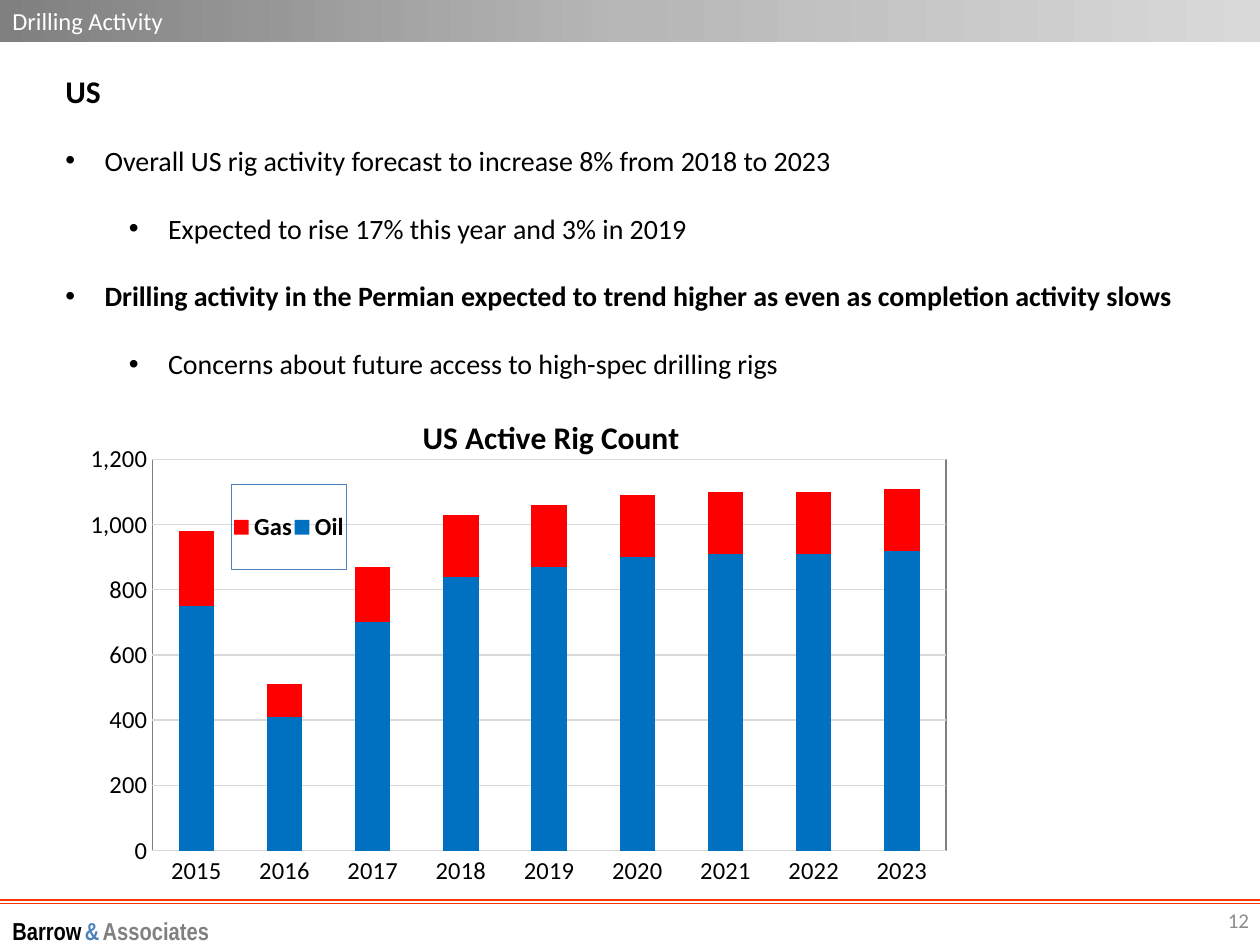
from dataclasses import dataclass

from lxml.etree import SubElement
from pptx import Presentation
from pptx.chart.data import CategoryChartData
from pptx.dml.color import RGBColor
from pptx.enum.chart import XL_CHART_TYPE, XL_LEGEND_POSITION, XL_TICK_MARK
from pptx.enum.shapes import MSO_CONNECTOR, MSO_SHAPE
from pptx.enum.text import MSO_ANCHOR, MSO_AUTO_SIZE, PP_ALIGN
from pptx.oxml.ns import qn
from pptx.util import Cm, Pt


@dataclass(frozen=True)
class Theme:
    font: str = "Calibri"
    footer_font: str = "Arial Narrow"
    black: str = "000000"
    white: str = "FFFFFF"
    muted: str = "8C8C8C"
    gray: str = "808080"
    accent: str = "4F81BD"
    rule: str = "FF3300"
    grid: str = "D9D9D9"
    oil: str = "0070C0"
    gas: str = "FF0000"
    band: tuple = ((0, "808080"), (50, "B7B7B7"), (100, "D9D9D9"))
    heading_size: int = 18
    body_size: int = 16
    label_size: int = 14
    number_size: int = 12
    gap_size: int = 8
    paragraph_gap: float = 19.5
    line_width: float = 0.75


THEME = Theme()
SLIDE_WIDTH, SLIDE_HEIGHT = Cm(25.4), Cm(19.05)
BULLET_HANG = Cm(0.79)

# text, left indent, bold
BULLETS = (
    ("Overall US rig activity forecast to increase 8% from 2018 to 2023", Cm(0.79), False),
    ("Expected to rise 17% this year and 3% in 2019", Cm(2.07), False),
    ("Drilling activity in the Permian expected to trend higher as even as "
     "completion activity slows", Cm(0.79), True),
    ("Concerns about future access to high-spec drilling rigs", Cm(2.07), False),
)
YEARS = [str(year) for year in range(2015, 2024)]
RIG_COUNTS = (
    ("Oil", (750, 410, 700, 840, 870, 900, 910, 910, 920), THEME.oil),
    ("Gas", (230, 100, 170, 190, 190, 190, 190, 190, 190), THEME.gas),
)


def style_font(font, size, color=THEME.black, bold=False, name=THEME.font):
    font.name = name
    font.size = Pt(size)
    font.bold = bold
    font.color.rgb = RGBColor.from_string(color)


def style_line(line, color):
    line.color.rgb = RGBColor.from_string(color)
    line.width = Pt(THEME.line_width)


def add_text_frame(slide, left, top, width, height, anchor=MSO_ANCHOR.MIDDLE):
    frame = slide.shapes.add_textbox(left, top, width, height).text_frame
    frame.word_wrap = True
    frame.vertical_anchor = anchor
    return frame


def add_header_band(slide, text):
    band = slide.shapes.add_shape(MSO_SHAPE.RECTANGLE, 0, 0, SLIDE_WIDTH, Cm(0.84))
    band.shadow.inherit = False
    band.line.fill.background()
    band.fill.gradient()
    band.fill.gradient_angle = 0
    stops = band._element.spPr.find(qn("a:gradFill")).find(qn("a:gsLst"))
    stops.clear()
    for percent, color in THEME.band:
        stop = SubElement(stops, qn("a:gs"), pos=str(percent * 1000))
        SubElement(stop, qn("a:srgbClr"), val=color)
    band.text_frame.vertical_anchor = MSO_ANCHOR.MIDDLE
    paragraph = band.text_frame.paragraphs[0]
    paragraph.text = text
    paragraph.alignment = PP_ALIGN.LEFT
    style_font(paragraph.font, THEME.label_size, THEME.white)


def add_bullet(frame, text, indent, bold):
    paragraph = frame.add_paragraph()
    paragraph.text = text
    paragraph.space_before = Pt(THEME.paragraph_gap)
    style_font(paragraph.font, THEME.body_size, bold=bold)
    properties = paragraph._p.get_or_add_pPr()
    properties.set("marL", str(indent))
    properties.set("indent", str(-BULLET_HANG))
    bullet_font = SubElement(properties, qn("a:buFont"), typeface="Arial")
    bullet = SubElement(properties, qn("a:buChar"), char="•")
    properties.find(qn("a:defRPr")).addprevious(bullet_font)
    bullet_font.addnext(bullet)


def add_body(slide):
    frame = add_text_frame(slide, Cm(1.07), Cm(1.32), Cm(23.06), Cm(6.5), MSO_ANCHOR.TOP)
    frame.auto_size = MSO_AUTO_SIZE.SHAPE_TO_FIT_TEXT
    heading = frame.paragraphs[0]
    heading.text = "US"
    style_font(heading.font, THEME.heading_size, bold=True)
    for bullet in BULLETS:
        add_bullet(frame, *bullet)


def place_in_chart(element, target=None, **fractions):
    """Fix a chart part's position as fractions (x, y, w, h) of the chart."""
    for old_layout in element.findall(qn("c:layout")):
        element.remove(old_layout)
    layout = SubElement(element, qn("c:layout"))
    overlay = element.find(qn("c:overlay"))
    if overlay is None:
        element.insert(0, layout)
    else:
        overlay.addprevious(layout)
    manual = SubElement(layout, qn("c:manualLayout"))
    if target:
        SubElement(manual, qn("c:layoutTarget"), val=target)
    for key in ("x", "y"):
        SubElement(manual, qn(f"c:{key}Mode"), val="edge")
    for key, value in fractions.items():
        SubElement(manual, qn(f"c:{key}"), val=str(value))


def add_outline(element, color):
    """Outline a chart part that has no format object."""
    properties = SubElement(element, qn("c:spPr"))
    line = SubElement(properties, qn("a:ln"), w=str(Pt(THEME.line_width)))
    fill = SubElement(line, qn("a:solidFill"))
    SubElement(fill, qn("a:srgbClr"), val=color)
    return properties


def style_axes(chart):
    for axis in (chart.category_axis, chart.value_axis):
        axis.major_tick_mark = axis.minor_tick_mark = XL_TICK_MARK.NONE
        style_font(axis.tick_labels.font, THEME.label_size)
    style_line(chart.category_axis.format.line, THEME.grid)
    values = chart.value_axis
    values.minimum_scale, values.maximum_scale, values.major_unit = 0, 1200, 200
    values.format.line.fill.background()
    values.tick_labels.number_format = "#,##0"
    values.tick_labels.number_format_is_linked = False
    style_line(values.major_gridlines.format.line, THEME.grid)


def style_legend(chart):
    chart.has_legend = True
    legend = chart.legend
    legend.position = XL_LEGEND_POSITION.RIGHT
    legend.include_in_layout = False
    style_font(legend.font, THEME.label_size, bold=True)
    place_in_chart(legend._element, x=0.18, y=0.17, w=0.13, h=0.17)
    outline = add_outline(legend._element, THEME.accent)
    legend._element.find(qn("c:txPr")).addprevious(outline)


def add_rig_chart(slide):
    data = CategoryChartData(number_format="#,##0")
    data.categories = YEARS
    for name, values, _ in RIG_COUNTS:
        data.add_series(name, values)
    chart = slide.shapes.add_chart(XL_CHART_TYPE.COLUMN_STACKED, Cm(1.47), Cm(8.05),
                                   Cm(17.78), Cm(10.11), data).chart
    style_font(chart.font, 10, bold=True)
    chart.has_title = True
    title = chart.chart_title.text_frame.paragraphs[0]
    title.text = "US Active Rig Count"
    style_font(title.font, THEME.heading_size, bold=True)
    place_in_chart(chart.chart_title._element, x=0.39, y=0.02)

    plot = chart.plots[0]
    plot.gap_width, plot.overlap, plot.vary_by_categories = 150, 100, False
    for series, (_, _, color) in zip(plot.series, RIG_COUNTS):
        series.format.fill.solid()
        series.format.fill.fore_color.rgb = RGBColor.from_string(color)
    style_axes(chart)
    style_legend(chart)
    plot_area = chart._chartSpace.chart.plotArea
    place_in_chart(plot_area, "inner", x=0.09, y=0.12, w=0.9, h=0.78)
    add_outline(plot_area, THEME.gray)


def add_rule(slide, top):
    rule = slide.shapes.add_connector(MSO_CONNECTOR.STRAIGHT, 0, top, SLIDE_WIDTH, top)
    style_line(rule.line, THEME.rule)
    SubElement(rule._element.spPr, qn("a:effectLst"))


def add_footer(slide):
    for top in (Cm(18.14), Cm(18.21)):
        add_rule(slide, top)
    name = add_text_frame(slide, 0, Cm(18.42), Cm(11), Cm(0.69)).paragraphs[0]
    words = (("Barrow", THEME.black), ("&", THEME.accent), ("Associates", THEME.gray))
    for index, (word, color) in enumerate(words):
        if index:
            gap = name.add_run()
            gap.text = " "
            style_font(gap.font, THEME.gap_size, name=THEME.footer_font)
        run = name.add_run()
        run.text = word
        style_font(run.font, THEME.label_size, color, True, THEME.footer_font)

    number = add_text_frame(slide, Cm(19.51), Cm(18.03), Cm(5.92), Cm(1.02)).paragraphs[0]
    number.text = "12"
    number.alignment = PP_ALIGN.RIGHT
    style_font(number.font, THEME.number_size, THEME.muted)


def main():
    presentation = Presentation()
    presentation.slide_width, presentation.slide_height = SLIDE_WIDTH, SLIDE_HEIGHT
    slide = presentation.slides.add_slide(presentation.slide_layouts[6])
    add_body(slide)
    add_header_band(slide, "Drilling Activity")
    add_rig_chart(slide)
    add_footer(slide)
    presentation.save("out.pptx")


if __name__ == "__main__":
    main()
